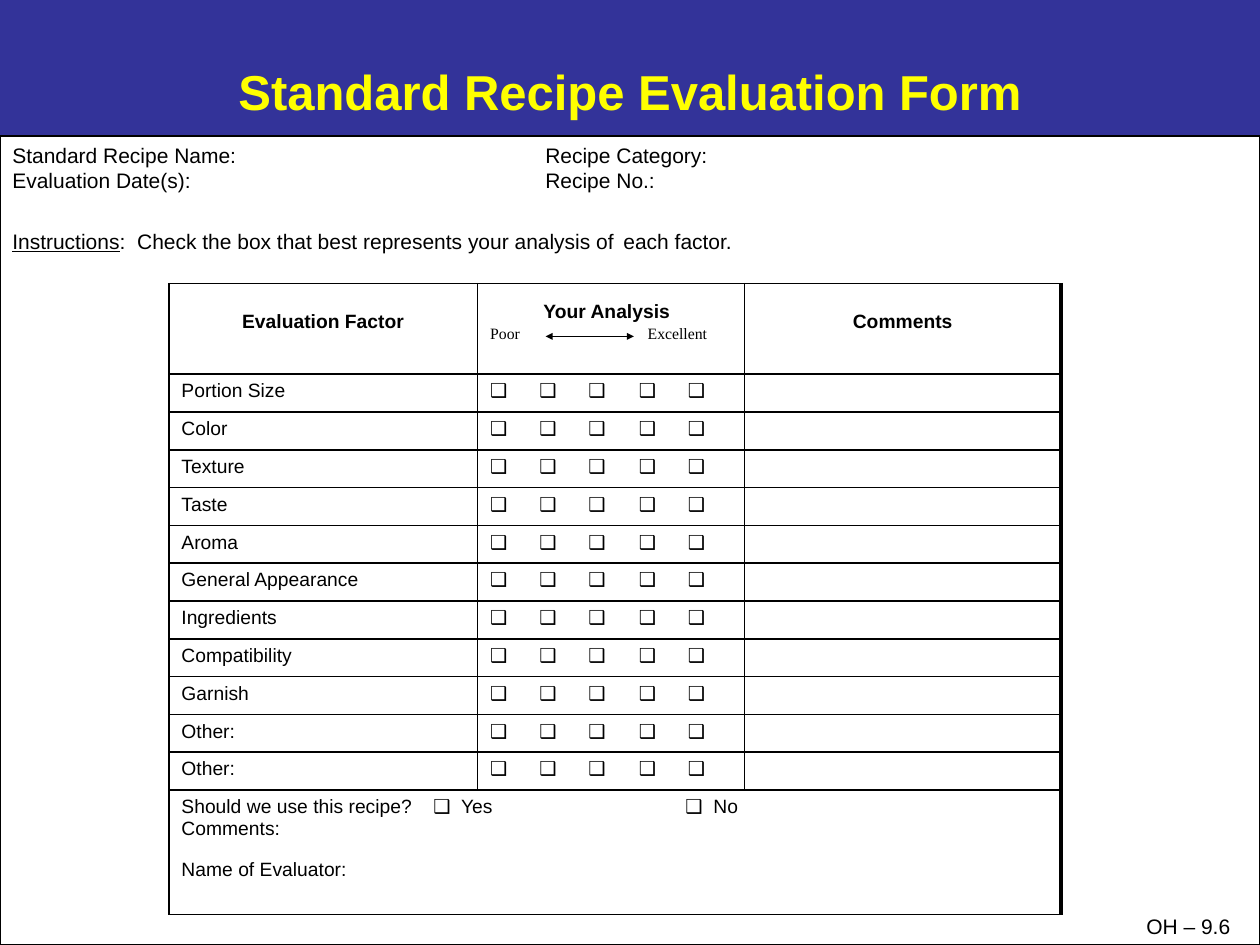
import lxml.etree
import pptx
import pptx.dml.color
import pptx.enum.shapes
import pptx.enum.text
import pptx.oxml.ns
import pptx.util

Inches = pptx.util.Inches
Pt = pptx.util.Pt
ALIGN = pptx.enum.text.PP_ALIGN
ANCHOR = pptx.enum.text.MSO_ANCHOR
BLACK, WHITE, BLUE, YELLOW = "000000", "FFFFFF", "333399", "FFFF00"
FACTORS = ["Portion Size", "Color", "Texture", "Taste", "Aroma",
           "General Appearance", "Ingredients", "Compatibility", "Garnish",
           "Other:", "Other:"]
COLUMN_WIDTHS = [2.45, 2.12, 2.51]
HEADER_HEIGHT, FACTOR_HEIGHT, SUMMARY_HEIGHT = 0.72, 0.3, 0.99
CHECKBOXES = "\t".join("❑" * 5)
CHECKBOX_STOPS = [0.39, 0.78, 1.18, 1.57]


def rgb(color):
    return pptx.dml.color.RGBColor.from_string(color)


def add_child(parent, tag, **attributes):
    return lxml.etree.SubElement(parent, pptx.oxml.ns.qn(tag), attributes)


def set_font(font, color=BLACK, **formats):
    values = {"name": "Arial", "size": Pt(12), "bold": False, **formats}
    for name, value in values.items():
        setattr(font, name, value)
    font.color.rgb = rgb(color)


def write_para(frame, spans, stops=(), align=ALIGN.LEFT, before=0, first=False):
    """Write one paragraph of (text, format) spans with tab stops in inches."""
    para = frame.paragraphs[0] if first else frame.add_paragraph()
    para.alignment = align
    para.space_before = Pt(before)
    if stops:
        tab_list = add_child(para._p.get_or_add_pPr(), "a:tabLst")
        for stop in stops:
            add_child(tab_list, "a:tab", pos=str(Inches(stop)), algn="l")
    for text, formats in spans:
        span = para.add_run()
        span.text = text
        set_font(span.font, **formats)


def place_title(page, left, top, width, height):
    title = page.shapes.title
    box = {"left": left, "top": top, "width": width, "height": height}
    for name, value in box.items():
        setattr(title, name, Inches(value))
    frame = title.text_frame
    frame.vertical_anchor = ANCHOR.MIDDLE
    write_para(frame, [("Standard Recipe Evaluation Form",
                        {"size": Pt(28), "bold": True, "color": YELLOW})],
               align=ALIGN.CENTER, first=True)


def add_form_sheet(page, left, top, width, height):
    sheet = page.shapes.add_shape(
        pptx.enum.shapes.MSO_SHAPE.RECTANGLE,
        Inches(left), Inches(top), Inches(width), Inches(height))
    sheet.shadow.inherit = False
    sheet.fill.solid()
    sheet.fill.fore_color.rgb = rgb(WHITE)
    sheet.line.color.rgb = rgb(BLACK)
    sheet.line.width = Pt(0.75)
    frame = sheet.text_frame
    frame.word_wrap = True
    frame.vertical_anchor = ANCHOR.TOP
    write_para(frame, [("Standard Recipe Name:\tRecipe Category:", {})],
               [4.23], first=True)
    write_para(frame, [("Evaluation Date(s):\tRecipe No.:", {})], [4.23])
    write_para(frame, [
        ("Instructions", {"underline": True}),
        (":  Check the box that best represents your analysis of", {}),
        (" ", {"size": Pt(18)}),
        ("each factor.", {})], before=14.5)


def format_cell(cell, right_width):
    """Set borders and fill, and keep an empty cell as low as its row."""
    cell_format = cell._tc.get_or_add_tcPr()
    for side, width in zip("LRTB", (1, right_width, 1, 1)):
        border = add_child(cell_format, f"a:ln{side}", w=str(Pt(width)))
        add_child(add_child(border, "a:solidFill"), "a:srgbClr", val=BLACK)
    cell.fill.background()
    if not cell.text_frame.text:
        add_child(cell.text_frame.paragraphs[0]._p, "a:endParaRPr", sz="1100")


def fill_header(table):
    heading = {"size": Pt(11), "bold": True}
    for column, text in ((0, "Evaluation Factor"), (2, "Comments")):
        cell = table.cell(0, column)
        cell.margin_top = Inches(0.22)
        write_para(cell.text_frame, [(text, heading)],
                   align=ALIGN.CENTER, first=True)
    analysis = table.cell(0, 1).text_frame
    write_para(analysis, [("Your Analysis", heading), (" ", {"size": Pt(18)})],
               align=ALIGN.CENTER, first=True)
    write_para(analysis, [("Poor\tExcellent",
                           {"name": "Times New Roman", "size": Pt(9)})], [1.25])


def fill_summary(cell):
    plain = {"size": Pt(11)}
    frame = cell.text_frame
    write_para(frame, [("Should we use this recipe?\t❑  Yes\t❑  No", plain)],
               [2, 4], first=True)
    write_para(frame, [("Comments:", plain)])
    write_para(frame, [("Name of Evaluator:", plain)], before=11.5)


def add_evaluation_table(page, left, top):
    heights = [HEADER_HEIGHT, *[FACTOR_HEIGHT] * len(FACTORS), SUMMARY_HEIGHT]
    table = page.shapes.add_table(
        len(heights), len(COLUMN_WIDTHS), Inches(left), Inches(top),
        Inches(sum(COLUMN_WIDTHS)), Inches(sum(heights))).table
    table.first_row = table.horz_banding = False
    for column, width in zip(table.columns, COLUMN_WIDTHS):
        column.width = Inches(width)
    for row, height in zip(table.rows, heights):
        row.height = Inches(height)
    last_row, last_column = len(heights) - 1, len(COLUMN_WIDTHS) - 1
    summary = table.cell(last_row, 0)
    summary.merge(table.cell(last_row, last_column))

    fill_header(table)
    plain = {"size": Pt(11)}
    for row, factor in enumerate(FACTORS, 1):
        write_para(table.cell(row, 0).text_frame, [(factor, plain)], first=True)
        write_para(table.cell(row, 1).text_frame, [(CHECKBOXES, plain)],
                   CHECKBOX_STOPS, first=True)
    fill_summary(summary)

    for row in range(len(heights)):
        for column in range(len(COLUMN_WIDTHS)):
            at_edge = column == last_column or row == last_row
            format_cell(table.cell(row, column), 2.25 if at_edge else 1)


def add_scale_arrow(page, left, top, width):
    arrow = page.shapes.add_connector(
        pptx.enum.shapes.MSO_CONNECTOR.STRAIGHT,
        Inches(left), Inches(top), Inches(left + width), Inches(top))
    arrow.line.color.rgb = rgb(BLACK)
    arrow.line.width = Pt(0.75)
    for end in ("a:headEnd", "a:tailEnd"):
        add_child(arrow.line._get_or_add_ln(), end,
                  type="triangle", w="sm", len="sm")
    add_child(arrow._element.spPr, "a:effectLst")


def add_page_label(page, left, top, width, height):
    label = page.shapes.add_textbox(
        Inches(left), Inches(top), Inches(width), Inches(height))
    label.text_frame.word_wrap = True
    write_para(label.text_frame, [("OH – 9.6", {})], first=True)


def main():
    deck = pptx.Presentation()
    deck.slide_width, deck.slide_height = Inches(10), Inches(7.5)
    page = deck.slides.add_slide(deck.slide_layouts[5])
    page.background.fill.solid()
    page.background.fill.fore_color.rgb = rgb(BLUE)
    place_title(page, 0.5, 0.5, 9, 0.44)
    add_form_sheet(page, 0, 1.08, 10, 6.42)
    add_evaluation_table(page, 1.34, 2.25)
    add_scale_arrow(page, 4.33, 2.67, 0.7)
    add_page_label(page, 9, 7.2, 1, 0.3)
    deck.save("out.pptx")


if __name__ == "__main__":
    main()
